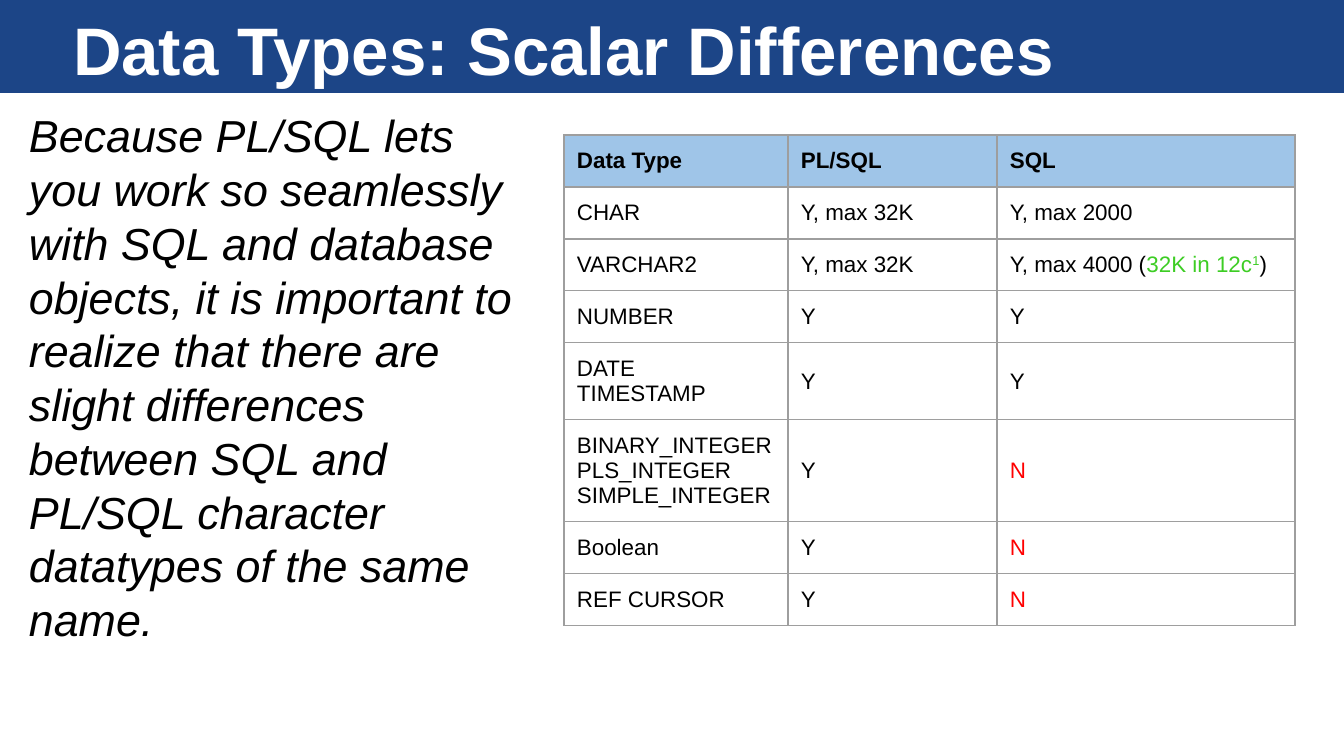
from dataclasses import dataclass
from typing import Any

from lxml.etree import SubElement as Sub
from pptx import Presentation
from pptx.dml.color import RGBColor as RGB
from pptx.enum.shapes import MSO_SHAPE as Shape
from pptx.enum.text import MSO_ANCHOR as Anchor, MSO_AUTO_SIZE as Auto, PP_ALIGN as Align
from pptx.oxml.ns import qn
from pptx.util import Emu, Pt

SCALE = 914400 / 134.4


@dataclass(frozen=True)
class Theme:
    font: str = "Arial"
    navy: str = "1C4587"
    sky: str = "9FC5E8"
    white: str = "FFFFFF"
    black: str = "000000"
    red: str = "FF0000"
    green: str = "3DCD24"
    gray: str = "9E9E9E"
    title: int = 36
    body: int = 24
    cell: int = 12
    lead: float = 28.8
    rule: float = 0.75


@dataclass(frozen=True)
class Box:
    x: int
    y: int
    w: int
    h: int


@dataclass(frozen=True)
class Span:
    text: str
    color: str
    base: int = 0


@dataclass(frozen=True)
class Row:
    kind: str
    plsql: str
    sql: str | tuple[Span, ...]
    mid: bool = False


THEME = Theme()
PAD = 13
LINE = 25
COLS = (224, 209, 298)
BODY = (
    "Because PL/SQL lets you work so seamlessly with SQL and database objects, "
    "it is important to realize that there are slight differences between SQL "
    "and PL/SQL character datatypes of the same name."
)
NO = (Span("N", THEME.red),)
LONG = (
    Span("Y, max 4000 (", THEME.black),
    Span("32K in 12c", THEME.green),
    Span("1", THEME.green, 30),
    Span(")", THEME.black),
)
ROWS = (
    Row("Data Type", "PL/SQL", "SQL"),
    Row("CHAR", "Y, max 32K", "Y, max 2000"),
    Row("VARCHAR2", "Y, max 32K", LONG),
    Row("NUMBER", "Y", "Y"),
    Row("DATE\nTIMESTAMP", "Y", "Y", mid=True),
    Row("BINARY_INTEGER\nPLS_INTEGER\nSIMPLE_INTEGER", "Y", NO, mid=True),
    Row("Boolean", "Y", NO),
    Row("REF CURSOR", "Y", NO),
)


def px(n: int) -> Emu:
    return Emu(round(n * SCALE))


def place(box: Box) -> tuple[Emu, Emu, Emu, Emu]:
    return px(box.x), px(box.y), px(box.w), px(box.h)


def write(frame: Any, text: str | tuple[Span, ...], *, size: int,
          color: str = THEME.black, bold: bool = False,
          slant: bool = False, lead: float | None = None) -> None:
    if isinstance(text, str):
        lines = [(Span(part, color),) for part in text.split("\n")]
    else:
        lines = [text]
    for i, line in enumerate(lines):
        para = frame.add_paragraph() if i else frame.paragraphs[0]
        para.alignment = Align.LEFT
        if lead:
            para.line_spacing = Pt(lead)
        for span in line:
            run = para.add_run()
            run.text = span.text
            font = run.font
            font.name, font.size = THEME.font, Pt(size)
            font.bold, font.italic = bold, slant
            font.color.rgb = RGB.from_string(span.color)
            if span.base:
                run._r.get_or_add_rPr().set("baseline", str(span.base * 1000))


def inset(item: Any) -> None:
    item.margin_left = item.margin_right = px(PAD)
    item.margin_top = item.margin_bottom = px(PAD)


def setup(frame: Any, anchor: Any) -> None:
    frame.word_wrap = True
    frame.auto_size = Auto.NONE
    frame.vertical_anchor = anchor
    inset(frame)


def edge(cell: Any) -> None:
    props = cell._tc.get_or_add_tcPr()
    for i, side in enumerate(("lnL", "lnR", "lnT", "lnB")):
        line = Sub(props, qn(f"a:{side}"), w=str(Pt(THEME.rule)))
        fill = Sub(line, qn("a:solidFill"))
        Sub(fill, qn("a:srgbClr"), val=THEME.gray)
        props.insert(i, line)


def add_band(slide: Any, box: Box) -> None:
    band = slide.shapes.add_shape(Shape.RECTANGLE, *place(box))
    band.shadow.inherit = False
    band.fill.solid()
    band.fill.fore_color.rgb = RGB.from_string(THEME.navy)
    band.line.fill.background()
    slide.shapes._spTree.insert(2, band._element)


def add_title(slide: Any, box: Box, text: str) -> None:
    title = slide.shapes.title
    title.left, title.top, title.width, title.height = place(box)
    setup(title.text_frame, Anchor.MIDDLE)
    write(title.text_frame, text, size=THEME.title, color=THEME.white, bold=True)


def add_body(slide: Any, box: Box, text: str) -> None:
    frame = slide.shapes.add_textbox(*place(box)).text_frame
    setup(frame, Anchor.TOP)
    write(frame, text, size=THEME.body, slant=True, lead=THEME.lead)


def add_grid(slide: Any, x: int, y: int, rows: tuple[Row, ...]) -> None:
    highs = [27 + LINE * len(row.kind.split("\n")) for row in rows]
    box = Box(x, y, sum(COLS), sum(highs))
    grid = slide.shapes.add_table(len(rows), len(COLS), *place(box)).table
    grid.horz_banding = False
    for col, wide in zip(grid.columns, COLS):
        col.width = px(wide)
    for i, (row, high) in enumerate(zip(rows, highs)):
        grid.rows[i].height = px(high)
        head = i == 0
        for j, text in enumerate((row.kind, row.plsql, row.sql)):
            cell = grid.cell(i, j)
            inset(cell)
            cell.vertical_anchor = Anchor.MIDDLE if row.mid and j else Anchor.TOP
            cell.fill.solid()
            cell.fill.fore_color.rgb = RGB.from_string(THEME.sky if head else THEME.white)
            edge(cell)
            write(cell.text_frame, text, size=THEME.cell, bold=head)


def main() -> None:
    deck = Presentation()
    deck.slide_width, deck.slide_height = px(1344), px(756)
    slide = deck.slides.add_slide(deck.slide_layouts[5])
    add_band(slide, Box(0, 0, 1344, 93))
    add_title(slide, Box(60, 5, 1210, 88), "Data Types: Scalar Differences")
    add_body(slide, Box(16, 95, 512, 565), BODY)
    add_grid(slide, 564, 135, ROWS)
    deck.save("out.pptx")


if __name__ == "__main__":
    main()
